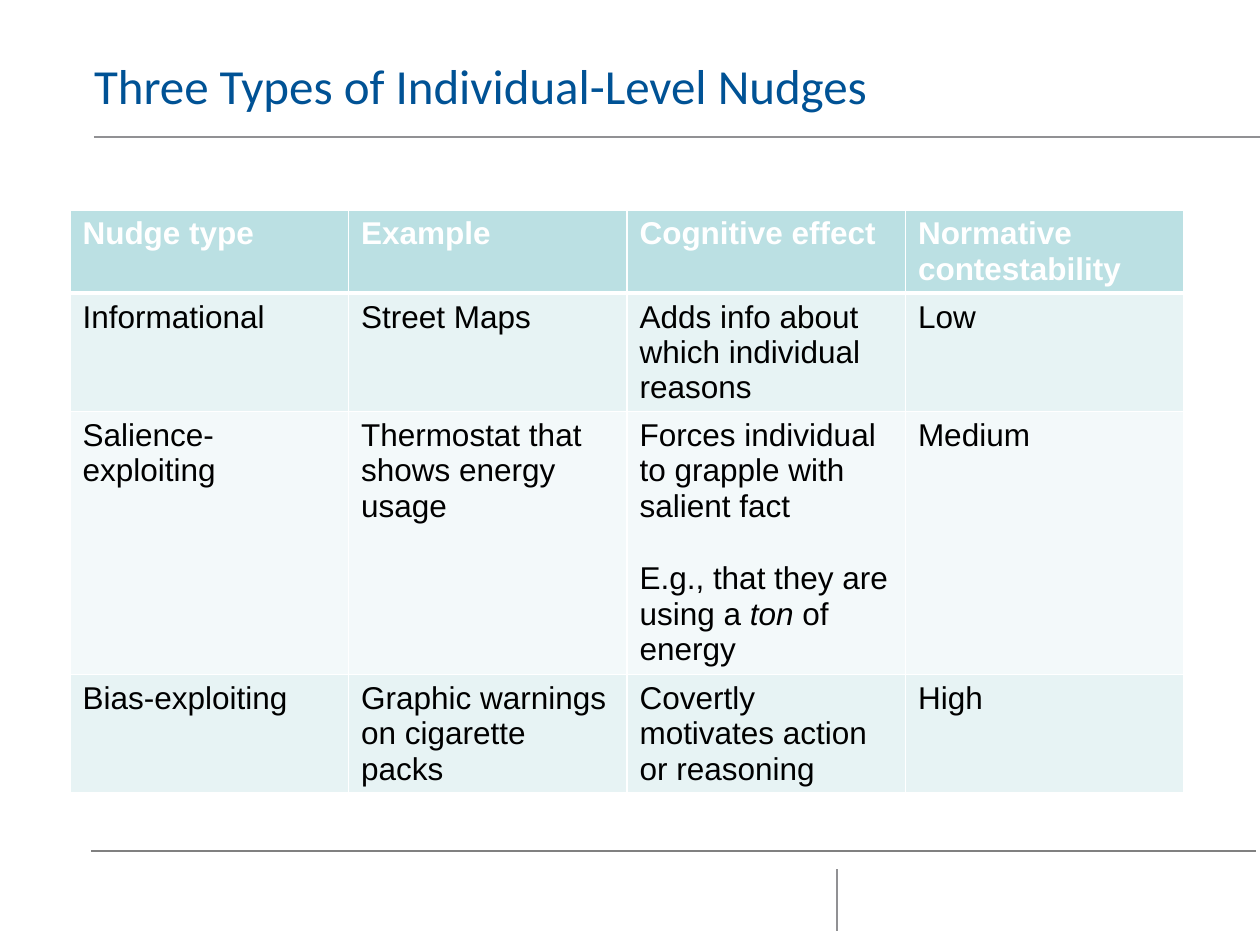
"""Build the slide on three types of individual-level nudges."""
import pptx
import pptx.dml.color
import pptx.enum.shapes
import pptx.enum.text
import pptx.oxml
import pptx.oxml.ns
import pptx.util

RGBColor = pptx.dml.color.RGBColor
WHITE = RGBColor(0xFF, 0xFF, 0xFF)
BLACK = RGBColor(0x00, 0x00, 0x00)
TITLE_BLUE = RGBColor(0x00, 0x52, 0x95)
FOOTER_GRAY = RGBColor(0x80, 0x80, 0x80)
RULE_GRAY = RGBColor(0x91, 0x91, 0x94)
HEADER_TEAL = RGBColor(0xBB, 0xE0, 0xE3)
BAND_DARK = RGBColor(0xE7, 0xF3, 0xF4)
BAND_LIGHT = RGBColor(0xF3, 0xF9, 0xFA)
PX_PER_INCH = 126


def px(length):
    return round(length * 914400 / PX_PER_INCH)


def add_border(cell, side, points):
    cell._tc.get_or_add_tcPr().append(pptx.oxml.parse_xml(
        f'<a:ln{side} {pptx.oxml.ns.nsdecls("a")} w="{points * 12700}">'
        f'<a:solidFill><a:srgbClr val="{WHITE}"/></a:solidFill></a:ln{side}>'))


deck = pptx.Presentation()
deck.slide_width = px(1260)
deck.slide_height = px(945)
page = deck.slides.add_slide(deck.slide_layouts[5])

rules = [
    (91, 851, 1256, 851, FOOTER_GRAY),
    (94, 137, 1260, 137, RULE_GRAY),
    (837, 931, 837, 869, RULE_GRAY),
]
for left, top, right, bottom, color in rules:
    rule = page.shapes.add_connector(
        pptx.enum.shapes.MSO_CONNECTOR.STRAIGHT, px(left), px(top), px(right), px(bottom))
    rule.line.color.rgb = color
    rule.line.width = pptx.util.Pt(1)
    rule._element.spPr.append(
        pptx.oxml.parse_xml(f'<a:effectLst {pptx.oxml.ns.nsdecls("a")}/>'))

title = page.shapes.title
title.left, title.top, title.width, title.height = px(94), px(58), px(1087), px(131)
frame = title.text_frame
frame.word_wrap = True
frame.auto_size = pptx.enum.text.MSO_AUTO_SIZE.NONE
frame.vertical_anchor = pptx.enum.text.MSO_ANCHOR.TOP
frame.margin_left = frame.margin_top = frame.margin_right = frame.margin_bottom = 0
para = frame.paragraphs[0]
para.alignment = pptx.enum.text.PP_ALIGN.LEFT
para.line_spacing = pptx.util.Pt(32)
span = para.add_run()
span.text = "Three Types of Individual-Level Nudges"
span.font.name = "Calibri"
span.font.size = pptx.util.Pt(28)
span.font.color.rgb = TITLE_BLUE

salience_effect = [
    [("Forces individual to grapple with salient fact", False)],
    [("E.g., that they are using a ", False), ("ton", True), (" of energy", False)],
]
rows = [
    ["Nudge type", "Example", "Cognitive effect", "Normative contestability"],
    ["Informational", "Street Maps", "Adds info about which individual reasons", "Low"],
    ["Salience-exploiting", "Thermostat that shows energy usage", salience_effect, "Medium"],
    ["Bias-exploiting", "Graphic warnings on cigarette packs",
     "Covertly motivates action or reasoning", "High"],
]
row_heights = [82, 118, 263, 118]
row_fills = [HEADER_TEAL, BAND_DARK, BAND_LIGHT, BAND_DARK]

table = page.shapes.add_table(
    len(rows), len(rows[0]), px(70), px(210), px(1114), px(sum(row_heights))).table
for row_index, row in enumerate(rows):
    is_header = row_index == 0
    table.rows[row_index].height = px(row_heights[row_index])
    for column_index, content in enumerate(row):
        cell = table.cell(row_index, column_index)
        for side in "LRTB":
            under_header = (row_index, side) in ((0, "B"), (1, "T"))
            add_border(cell, side, 3 if under_header else 1)
        cell.fill.solid()
        cell.fill.fore_color.rgb = row_fills[row_index]
        paragraphs = [[(content, False)]] if isinstance(content, str) else content
        for para_index, runs in enumerate(paragraphs):
            if para_index == 0:
                para = cell.text_frame.paragraphs[0]
            else:
                para = cell.text_frame.add_paragraph()
                para.space_before = pptx.util.Pt(21.5)
            for text, italic in runs:
                span = para.add_run()
                span.text = text
                span.font.name = "Arial"
                span.font.size = pptx.util.Pt(18)
                span.font.bold = is_header
                span.font.italic = italic
                span.font.color.rgb = WHITE if is_header else BLACK

deck.save("out.pptx")
